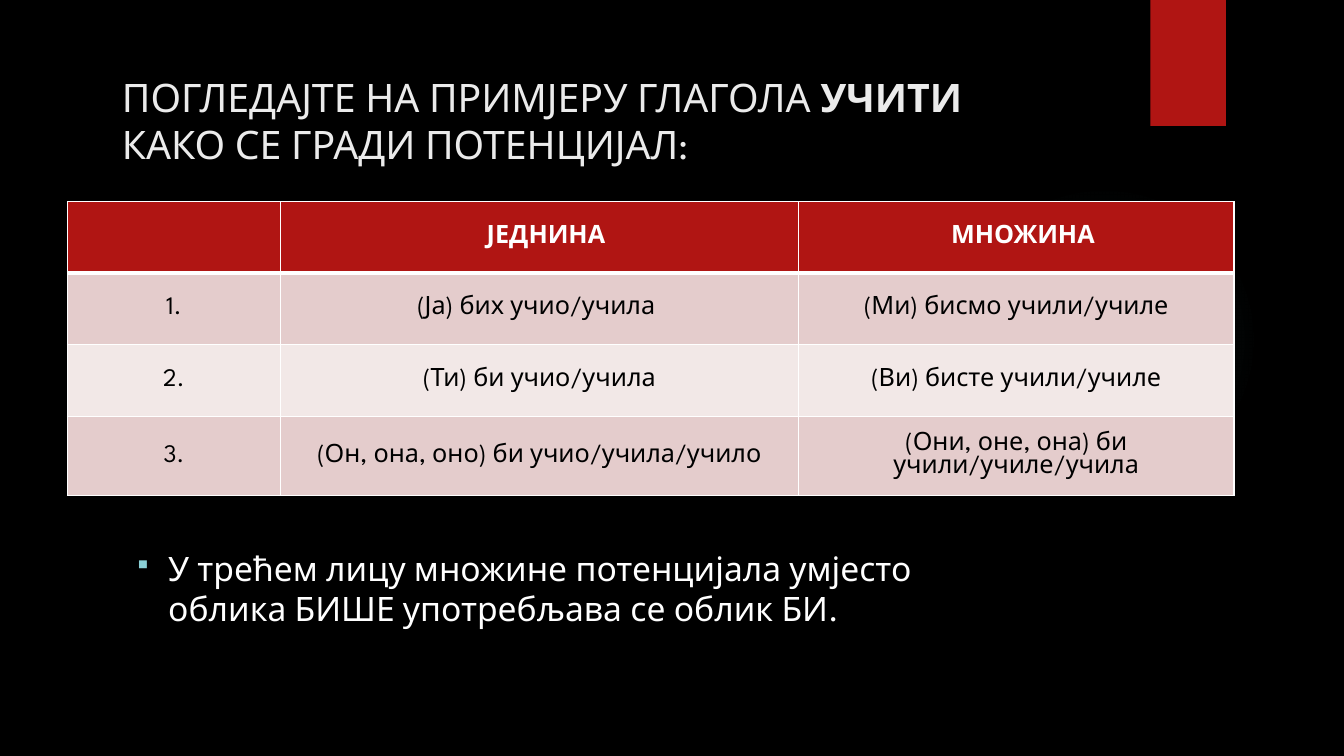
import pptx
import pptx.dml.color
import pptx.enum.shapes
import pptx.enum.text
import pptx.oxml
import pptx.oxml.ns
import pptx.util
from pptx.util import Inches

FONT = "League Spartan"
HARD_SPACE = chr(160)
TITLE = [("ПОГЛЕДАЈТЕ НА ПРИМЈЕРУ ГЛАГОЛА ", False), ("УЧИТИ", True),
         (" КАКО СЕ ГРАДИ ПОТЕНЦИЈАЛ:", False)]
NOTE = HARD_SPACE.join(["У трећем лицу множине потенцијала умјесто облика", "БИШЕ",
                        "употребљава се облик БИ."])
CONJUGATION = [
    ("", HARD_SPACE + " ЈЕДНИНА", HARD_SPACE + " МНОЖИНА"),
    ("1.", "(Ја) бих учио/учила" + HARD_SPACE, "(Ми) бисмо учили/училе"),
    ("2.", "(Ти) би учио/учила", "(Ви) бисте учили/училе"),
    ("3.", "(Он, она, оно) би учио/учила/учило", "(Они, оне, она) би учили/училе/учила"),
]
COLUMN_WIDTHS = [2.11, 5.14, 4.32]
ROW_HEIGHTS = [0.71, 0.71, 0.71, 0.79]
RED, WHITE, BLACK = "B01513", "FFFFFF", "000000"
BANDS = ["F2E8E7", "E4CCCC"]
GLOW_STOPS = [(0, 7), (36, 6), (69, 0)]
MIDDLE = pptx.enum.text.MSO_ANCHOR.MIDDLE
SHAPES = pptx.enum.shapes.MSO_SHAPE


def color(value):
    return pptx.dml.color.RGBColor.from_string(value)


def xml(tag, attributes="", inner=""):
    namespace = pptx.oxml.ns.nsdecls("a")
    return pptx.oxml.parse_xml(f"<a:{tag} {namespace} {attributes}>{inner}</a:{tag}>")


def add_span(para, text, size, ink, bold=False):
    span = para.add_run()
    span.text = text
    span.font.name = FONT
    span.font.size = pptx.util.Pt(size)
    span.font.bold = bold
    span.font.color.rgb = color(ink)


def add_plain_shape(page, kind, left, top, width, height):
    shape = page.shapes.add_shape(kind, Inches(left), Inches(top), Inches(width), Inches(height))
    shape.shadow.inherit = False
    shape.line.fill.background()
    return shape


def add_backdrop(page):
    page.background.fill.solid()
    page.background.fill.fore_color.rgb = color(BLACK)
    glow = add_plain_shape(page, SHAPES.OVAL, 9.41, 1.83, 3.08, 3.08)
    stops = "".join(f'<a:gs pos="{place * 1000}"><a:srgbClr val="50B9C1">'
                    f'<a:alpha val="{alpha * 1000}"/></a:srgbClr></a:gs>'
                    for place, alpha in GLOW_STOPS)
    center = '<a:fillToRect l="50000" t="50000" r="50000" b="50000"/>'
    fill = xml("gradFill", "", f'<a:gsLst>{stops}</a:gsLst><a:path path="circle">{center}</a:path>')
    glow._element.spPr.find(pptx.oxml.ns.qn("a:prstGeom")).addnext(fill)
    ribbon = add_plain_shape(page, SHAPES.RECTANGLE, 11.41, 0, 0.75, 1.25)
    ribbon.fill.solid()
    ribbon.fill.fore_color.rgb = color(RED)


def add_title(page):
    title = page.shapes.title
    title.left, title.top, title.width, title.height = map(Inches, (1.11, 0.69, 9.5, 1))
    title.text_frame.vertical_anchor = MIDDLE
    para = title.text_frame.paragraphs[0]
    para.alignment = pptx.enum.text.PP_ALIGN.LEFT
    for text, bold in TITLE:
        add_span(para, text, 28, "EBEBEB", bold)


def add_note(page):
    box = page.shapes.add_textbox(Inches(1.26), Inches(5.09), Inches(9.65), Inches(1.49))
    box.text_frame.word_wrap = True
    box.text_frame.vertical_anchor = MIDDLE
    para = box.text_frame.paragraphs[0]
    properties = para._p.get_or_add_pPr()
    properties.set("marL", str(Inches(0.31)))
    properties.set("indent", str(-Inches(0.31)))
    properties.append(xml("buClr", "", '<a:srgbClr val="8AD0D6"/>'))
    properties.append(xml("buSzPct", 'val="80000"'))
    properties.append(xml("buFont", 'typeface="Wingdings" charset="2"'))
    properties.append(xml("buChar", 'char="§"'))
    add_span(para, NOTE, 24, WHITE)


def set_borders(cell, bottom):
    properties = cell._tc.get_or_add_tcPr()
    line = f'<a:solidFill><a:srgbClr val="{WHITE}"/></a:solidFill>'
    for index, (side, width) in enumerate((("lnL", 1), ("lnR", 1), ("lnT", 1), ("lnB", bottom))):
        properties.insert(index, xml(side, f'w="{pptx.util.Pt(width)}"', line))


def add_conjugation(page):
    frame = page.shapes.add_table(len(ROW_HEIGHTS), len(COLUMN_WIDTHS), Inches(0.67), Inches(2),
                                  Inches(sum(COLUMN_WIDTHS)), Inches(sum(ROW_HEIGHTS)))
    table = frame.table
    for column, width in zip(table.columns, COLUMN_WIDTHS):
        column.width = Inches(width)
    for index, (row, height) in enumerate(zip(table.rows, ROW_HEIGHTS)):
        row.height = Inches(height)
        header = index == 0
        for cell, text in zip(row.cells, CONJUGATION[index]):
            cell.fill.solid()
            cell.fill.fore_color.rgb = color(RED if header else BANDS[index % 2])
            set_borders(cell, 3 if header else 1)
            cell.vertical_anchor = MIDDLE
            para = cell.text_frame.paragraphs[0]
            para.alignment = pptx.enum.text.PP_ALIGN.CENTER
            if text:
                add_span(para, text, 18, WHITE if header else BLACK, header)


def main():
    deck = pptx.Presentation()
    deck.slide_width, deck.slide_height = Inches(13.33), Inches(7.5)
    page = deck.slides.add_slide(deck.slide_layouts[5])
    add_backdrop(page)
    add_title(page)
    add_note(page)
    add_conjugation(page)
    deck.save("out.pptx")


if __name__ == "__main__":
    main()
